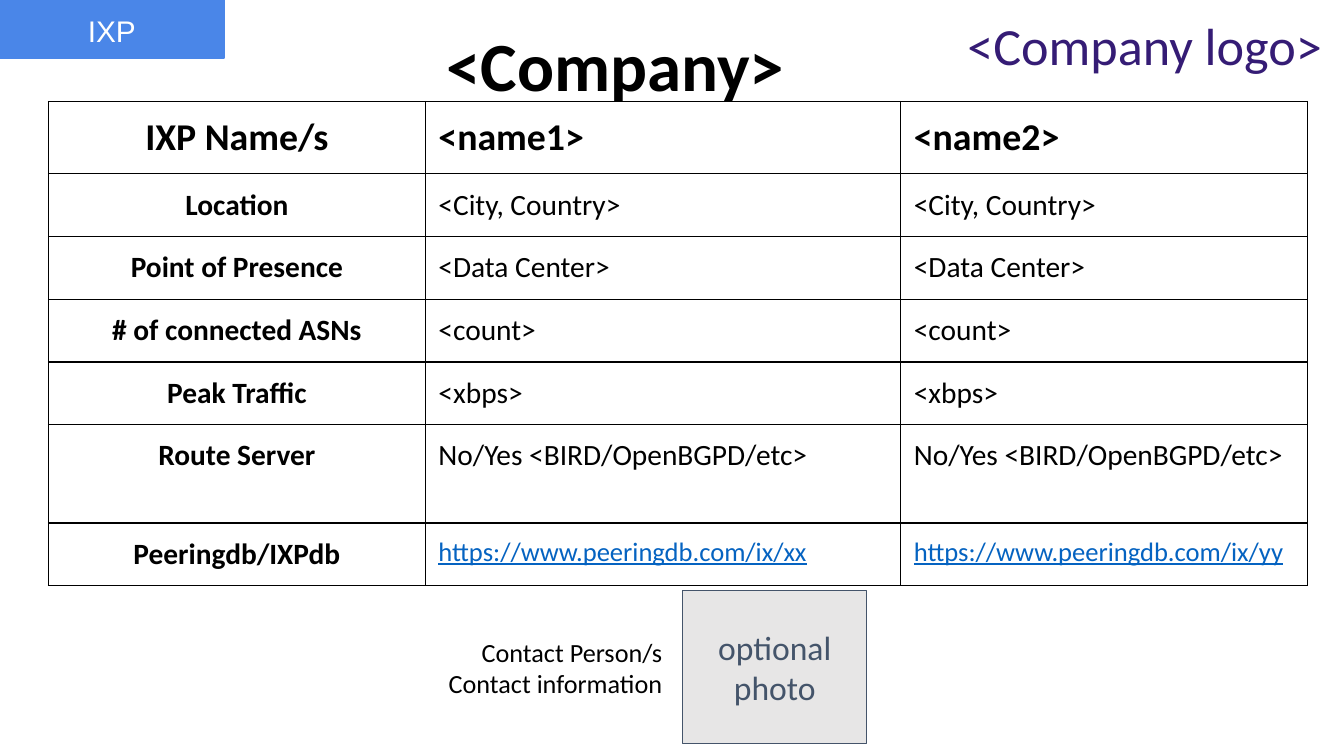
"""Build a one-slide profile of an internet exchange point operator."""
from lxml.etree import SubElement
from pptx import Presentation
from pptx.dml.color import RGBColor
from pptx.enum.shapes import MSO_SHAPE
from pptx.enum.text import MSO_ANCHOR, MSO_AUTO_SIZE, PP_ALIGN
from pptx.oxml.ns import qn
from pptx.util import Cm, Pt

COLORS = {"ink": "000000", "white": "FFFFFF", "logo": "351C75", "link": "0563C1",
          "tag": "4A86E8", "photo": "E7E6E6", "slate": "44546A"}

ROWS = [
    ("IXP Name/s", "<name1>", "<name2>"),
    ("Location", "<City, Country>", "<City, Country>"),
    ("Point of Presence", "<Data Center>", "<Data Center>"),
    ("# of connected ASNs", "<count>", "<count>"),
    ("Peak Traffic", "<xbps>", "<xbps>"),
    ("Route Server", "No/Yes <BIRD/OpenBGPD/etc>", "No/Yes <BIRD/OpenBGPD/etc>"),
    ("Peeringdb/IXPdb", "https://www.peeringdb.com/ix/xx", "https://www.peeringdb.com/ix/yy"),
]
WIDTHS = (9.5, 11.98, 10.24)
HEIGHTS = (1.81, 1.58, 1.58, 1.58, 1.58, 2.48, 1.58)
TABLE = (1.22, 2.56, sum(WIDTHS), sum(HEIGHTS))

TITLE = ("<Company>", (10.92, 0.23, 13.11, 3.25))
LOGO = ("<Company logo>", (24.05, 0, 10.52, 3.25))
CONTACT = ("Contact Person/s\nContact information", (10.72, 15.7, 6.3, 2.29))
PHOTO = ("optional\nphoto", (17.2, 14.88, 4.65, 3.86))
TAG = ("IXP", (0, 0, 5.64, 1.47))
INSET = Cm(0.33)


def tint(name):
    return RGBColor.from_string(COLORS[name])


def write(frame, text, size, color="ink", align=PP_ALIGN.LEFT, bold=False,
          line=False, face="Calibri"):
    frame.text = text
    for para in frame.paragraphs:
        para.alignment = align
        para.line_spacing = 1.0
        for run in para.runs:
            font = run.font
            font.name, font.size, font.bold = face, Pt(size), bold
            font.underline = line
            font.color.rgb = tint(color)


def pad(item):
    item.margin_left = item.margin_right = INSET
    item.margin_top = item.margin_bottom = INSET


def fit(frame, anchor=MSO_ANCHOR.TOP):
    pad(frame)
    frame.word_wrap = True
    frame.auto_size = MSO_AUTO_SIZE.NONE
    frame.vertical_anchor = anchor


def label(shapes, item, size, **style):
    text, place = item
    box = shapes.add_textbox(*map(Cm, place))
    fit(box.text_frame)
    write(box.text_frame, text, size, **style)


def block(shapes, item, fill, edge, width, anchor, size, **style):
    text, place = item
    box = shapes.add_shape(MSO_SHAPE.RECTANGLE, *map(Cm, place))
    box.shadow.inherit = False
    box.fill.solid()
    box.fill.fore_color.rgb = tint(fill)
    box.line.color.rgb = tint(edge)
    box.line.width = Pt(width)
    fit(box.text_frame, anchor)
    write(box.text_frame, text, size, align=PP_ALIGN.CENTER, **style)


def frame_cell(cell):
    props = cell._tc.get_or_add_tcPr()
    for spot, side in enumerate(("lnL", "lnR", "lnT", "lnB")):
        edge = SubElement(props, qn(f"a:{side}"), w=str(Pt(1)))
        fill = SubElement(edge, qn("a:solidFill"))
        SubElement(fill, qn("a:srgbClr"), val=COLORS["ink"])
        props.insert(spot, edge)


def add_grid(shapes):
    grid = shapes.add_table(len(ROWS), len(WIDTHS), *map(Cm, TABLE)).table
    grid.first_row = grid.horz_banding = False
    for col, width in zip(grid.columns, WIDTHS):
        col.width = Cm(width)
    for row, height in zip(grid.rows, HEIGHTS):
        row.height = Cm(height)
    for r, row in enumerate(ROWS):
        for c, text in enumerate(row):
            cell = grid.cell(r, c)
            pad(cell)
            cell.fill.background()
            frame_cell(cell)
            link = text.startswith("https")
            write(cell.text_frame, text, 27 if r == 0 else 19 if link else 21,
                  color="link" if link else "ink", line=link,
                  bold=r == 0 or c == 0,
                  align=PP_ALIGN.LEFT if c else PP_ALIGN.CENTER)


def main():
    deck = Presentation()
    deck.slide_width, deck.slide_height = Cm(33.87), Cm(19.05)
    slide = deck.slides.add_slide(deck.slide_layouts[5])
    shapes = slide.shapes

    text, place = TITLE
    title = shapes.title
    title.left, title.top, title.width, title.height = map(Cm, place)
    fit(title.text_frame)
    write(title.text_frame, text, 49.3, bold=True)

    add_grid(shapes)
    label(shapes, LOGO, 37.3, color="logo")
    block(shapes, PHOTO, "photo", "slate", 0.75, MSO_ANCHOR.MIDDLE, 24, color="slate")
    label(shapes, CONTACT, 18.7, align=PP_ALIGN.RIGHT)
    block(shapes, TAG, "tag", "tag", 1.5, MSO_ANCHOR.TOP, 21.3, color="white", face="Arial")
    deck.save("out.pptx")


if __name__ == "__main__":
    main()
